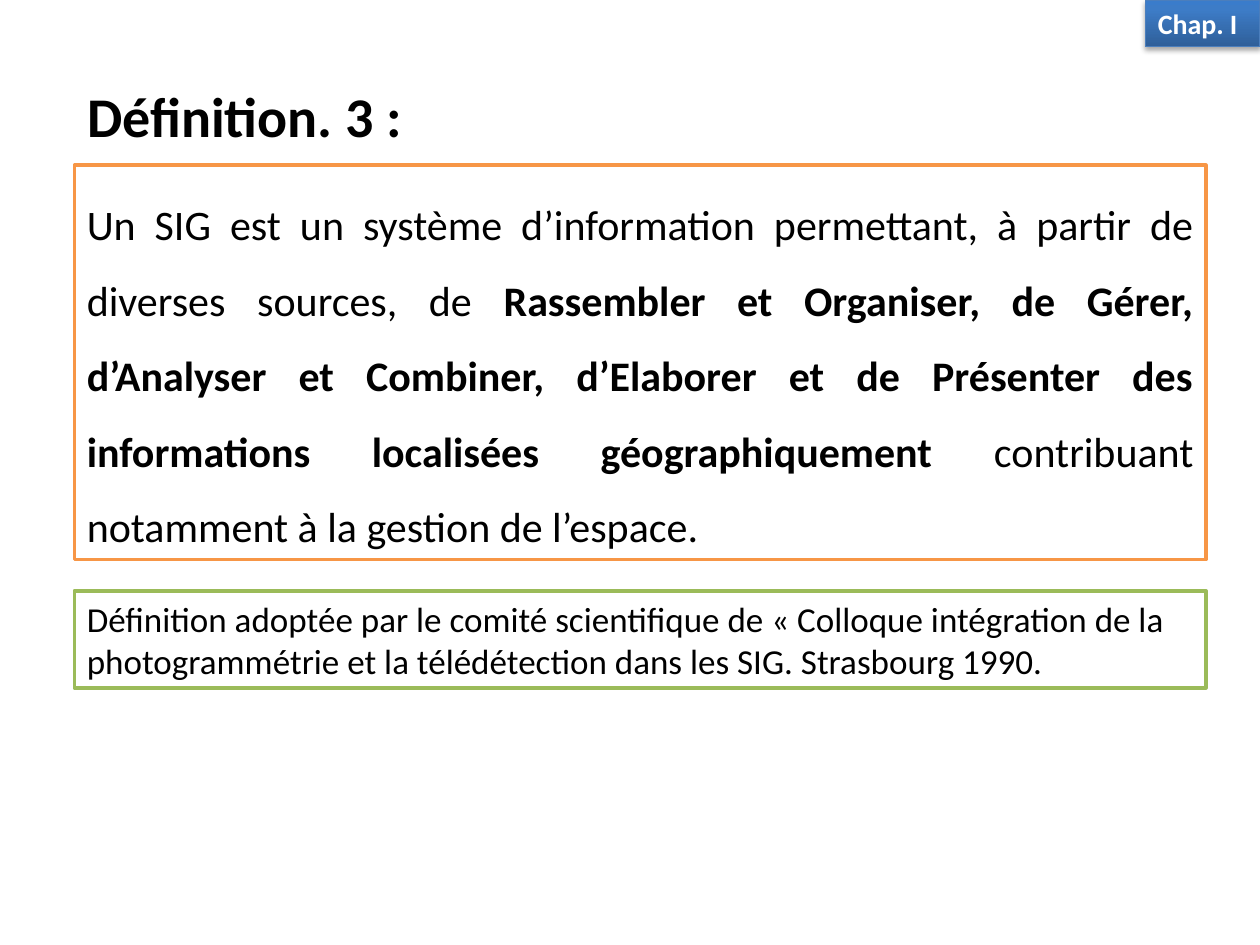
"""Build the slide giving the third definition of a SIG."""
from copy import deepcopy
from dataclasses import dataclass

from lxml import etree
from pptx import Presentation
from pptx import util as u
from pptx.dml.color import RGBColor
from pptx.enum import shapes, text
from pptx.oxml import ns

LEFT = text.PP_ALIGN.LEFT
FULL = text.PP_ALIGN.JUSTIFY


@dataclass(frozen=True)
class Theme:
    """Colours, font and type sizes of the slide."""
    font: str = "Calibri"
    ink: str = "000000"
    paper: str = "FFFFFF"
    warm: str = "F79646"
    leaf: str = "9BBB59"
    edge: str = "4B7EBC"
    ramp: tuple = ((0, "2F5F99"), (0.8, "3D7CC7"), (1, "3A7CCB"))
    head: int = 32
    body: int = 24
    note: int = 20
    tag: int = 16


@dataclass(frozen=True)
class Box:
    """Place in centimetres and outline of a rectangle."""
    left: float
    top: float
    width: float
    height: float
    line: str
    weight: float = 2

    def place(self) -> tuple:
        """Return left, top, width and height as lengths."""
        return tuple(map(u.Cm, (self.left, self.top, self.width, self.height)))


T = Theme()
EDGE, WIDE = 1.5, 22.81
MAIN = Box(EDGE, 3.33, WIDE, 7.95, T.warm)
NOTE = Box(EDGE, 11.91, WIDE, 1.96, T.leaf)
TAG = Box(23.09, 0, 2.31, 0.94, T.edge, 0.75)


def rgb(code: str) -> RGBColor:
    """Turn a hex code into a colour."""
    return RGBColor.from_string(code)


def write(frame, *runs, size=T.body, color=T.ink, bold=(), align=LEFT, space=1.0):
    """Write runs in one paragraph; bold lists the indexes of bold runs."""
    frame.word_wrap = True
    para = frame.paragraphs[0]
    para.alignment, para.line_spacing = align, space
    for i, words in enumerate(runs):
        run = para.add_run()
        run.text = words
        run.font.name, run.font.size = T.font, u.Pt(size)
        run.font.bold = i in bold
        run.font.color.rgb = rgb(color)


def draw(slide, box: Box, *runs, **form):
    """Draw a white rectangle holding text and return it."""
    shape = slide.shapes.add_shape(shapes.MSO_SHAPE.RECTANGLE, *box.place())
    shape.shadow.inherit = False
    shape.fill.solid()
    shape.fill.fore_color.rgb = rgb(T.paper)
    shape.line.color.rgb = rgb(box.line)
    shape.line.width = u.Pt(box.weight)
    write(shape.text_frame, *runs, **form)
    shape.text_frame.auto_size = text.MSO_AUTO_SIZE.SHAPE_TO_FIT_TEXT
    return shape


def shade(shape) -> None:
    """Give a shape the rising colour ramp and a soft shadow below."""
    shape.fill.gradient()
    shape.fill.gradient_angle = 90
    props = shape._element.spPr
    stops = props.find(".//" + ns.qn("a:gsLst"))
    stops.append(deepcopy(stops[-1]))
    for stop, (place, code) in zip(shape.fill.gradient_stops, T.ramp):
        stop.position, stop.color.rgb = place, rgb(code)
    cast = etree.SubElement(
        props.find(ns.qn("a:effectLst")), ns.qn("a:outerShdw"),
        blurRad=str(u.Pt(3.1)), dist=str(u.Pt(1.8)), dir="5400000", rotWithShape="0")
    tint = etree.SubElement(cast, ns.qn("a:srgbClr"), val=T.ink)
    etree.SubElement(tint, ns.qn("a:alpha"), val="35000")


def main() -> None:
    """Build and save the slide."""
    deck = Presentation()
    deck.slide_width, deck.slide_height = u.Cm(25.4), u.Cm(19.05)
    slide = deck.slides.add_slide(deck.slide_layouts[5])
    title = slide.shapes.title
    title.left, title.top, title.width, title.height = map(u.Cm, (EDGE, 1.32, 22.63, 2.01))
    title.text_frame.vertical_anchor = text.MSO_ANCHOR.MIDDLE
    write(title.text_frame, "Définition. 3 :", size=T.head, bold=(0,))
    draw(slide, MAIN,
         "Un SIG est un système d’information permettant, à partir de diverses sources, de ",
         "Rassembler et Organiser, de Gérer, d’Analyser et Combiner, d’Elaborer et de "
         "Présenter des informations localisées géographiquement",
         " contribuant notamment à la gestion de l’espace.",
         bold=(1,), align=FULL, space=1.5)
    draw(slide, NOTE,
         "Définition adoptée par le comité scientifique de « Colloque intégration de la "
         "photogrammétrie et la télédétection dans les SIG. Strasbourg 1990.", size=T.note)
    shade(draw(slide, TAG, "Chap. I", size=T.tag, color=T.paper, bold=(0,)))
    deck.save("out.pptx")


if __name__ == "__main__":
    main()
